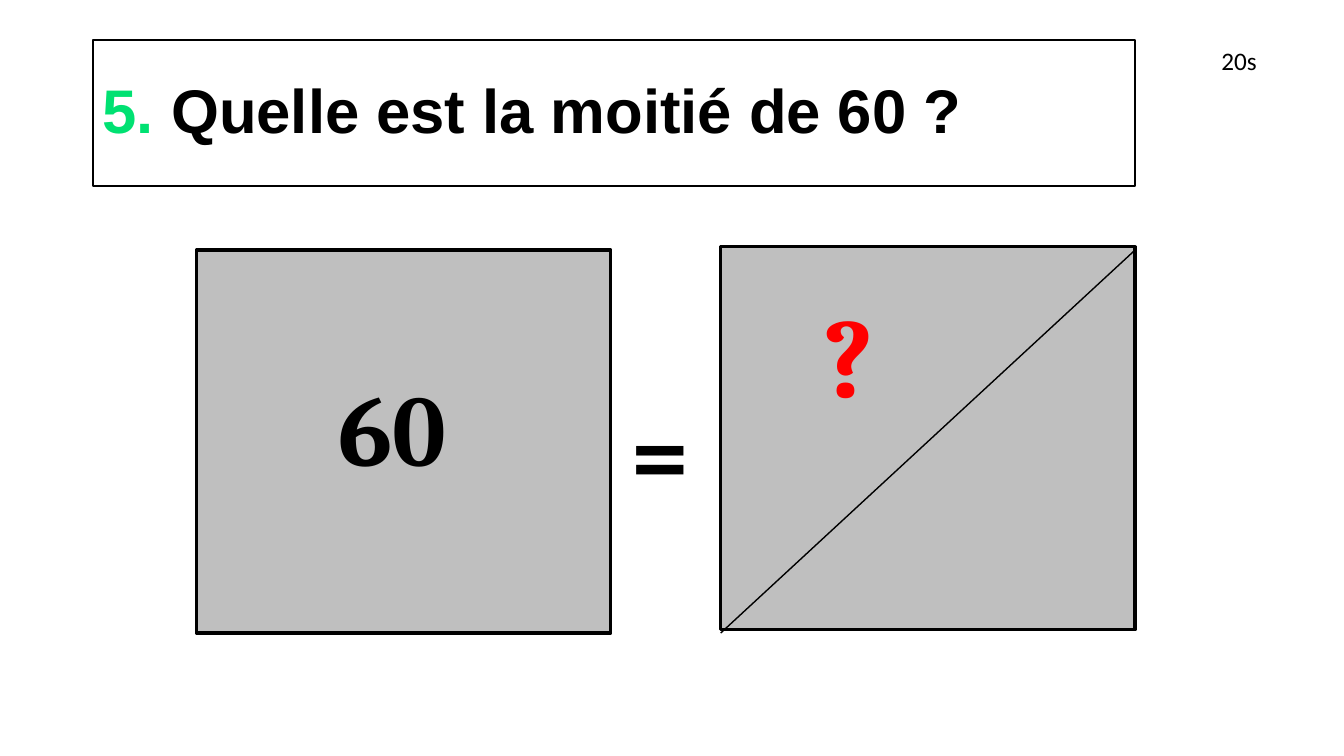
from pptx import Presentation
from pptx.dml.color import RGBColor
from pptx.enum.shapes import MSO_CONNECTOR, MSO_SHAPE
from pptx.enum.text import MSO_ANCHOR, MSO_AUTO_SIZE, PP_ALIGN
from pptx.oxml.ns import qn
from pptx.util import Pt
from lxml import etree

COLORS = {"ink": "000000", "number": "00E172", "square": "BFBFBF", "unknown": "FF0000"}
SQUARE_WIDTH, SQUARE_HEIGHT = 296, 273.6
WHOLE_LEFT, WHOLE_TOP = 140.4, 178.6
HALVES_LEFT, HALVES_TOP = 514.8, 176.4
SIGN_WIDTH = 106.6


class QuizSlide:
    def __init__(self, presentation):
        self.slide = presentation.slides.add_slide(presentation.slide_layouts[5])
        self.diagram = self.slide.shapes.add_group_shape().shapes

    def color(self, name):
        return RGBColor.from_string(COLORS[name])

    def outline(self, shape, width):
        shape.line.color.rgb = self.color("ink")
        shape.line.width = Pt(width)

    def add_runs(self, paragraph, runs, font, bold=True):
        """Add runs given as (text, size, color name)."""
        for text, size, color in runs:
            run = paragraph.add_run()
            run.text = text
            run.font.name = font
            run.font.size = Pt(size)
            run.font.bold = bold
            run.font.color.rgb = self.color(color)

    def title(self, left, top, width, height, runs):
        question = self.slide.shapes.title
        question.left, question.top = Pt(left), Pt(top)
        question.width, question.height = Pt(width), Pt(height)
        self.outline(question, 1.5)
        frame = question.text_frame
        frame.word_wrap = True
        frame.auto_size = MSO_AUTO_SIZE.NONE
        frame.vertical_anchor = MSO_ANCHOR.MIDDLE
        paragraph = frame.paragraphs[0]
        paragraph.alignment = PP_ALIGN.LEFT
        paragraph.line_spacing = 0.9
        self.add_runs(paragraph, runs, "Arial")

    def square(self, left, top):
        square = self.diagram.add_shape(
            MSO_SHAPE.RECTANGLE, Pt(left), Pt(top), Pt(SQUARE_WIDTH), Pt(SQUARE_HEIGHT))
        square.shadow.inherit = False
        square.fill.solid()
        square.fill.fore_color.rgb = self.color("square")
        self.outline(square, 2.25)

    def diagonal(self, left, bottom, right, top):
        diagonal = self.diagram.add_connector(
            MSO_CONNECTOR.STRAIGHT, Pt(left), Pt(bottom), Pt(right), Pt(top))
        self.outline(diagonal, 1)
        etree.SubElement(diagonal._element.spPr, qn("a:effectLst"))

    def text(self, shapes, left, top, width, height, runs, font,
             bold=True, wrap=True, align=PP_ALIGN.CENTER):
        box = shapes.add_textbox(Pt(left), Pt(top), Pt(width), Pt(height))
        frame = box.text_frame
        frame.word_wrap = wrap
        frame.auto_size = MSO_AUTO_SIZE.SHAPE_TO_FIT_TEXT
        frame.paragraphs[0].alignment = align
        self.add_runs(frame.paragraphs[0], runs, font, bold)

    def sign(self, left, top, height, *runs):
        self.text(self.diagram, left, top, SIGN_WIDTH, height, runs, "Cambria")


def main():
    presentation = Presentation()
    presentation.slide_width, presentation.slide_height = Pt(960), Pt(540)
    quiz = QuizSlide(presentation)
    quiz.title(66.2, 28.8, 744.5, 104.4, [
        ("5. ", 44, "number"), ("Quelle est la moitié de 60 ?", 44, "ink")])
    quiz.square(WHOLE_LEFT, WHOLE_TOP)
    quiz.square(HALVES_LEFT, HALVES_TOP)
    quiz.sign(226.8, 257.8, 94.3, ("60 ", 72, "ink"))
    quiz.diagonal(HALVES_LEFT, WHOLE_TOP + SQUARE_HEIGHT,
                  HALVES_LEFT + SQUARE_WIDTH, WHOLE_TOP)
    quiz.sign(560.9, 200.2, 115.2, ("?", 80, "unknown"), (" ", 72, "unknown"))
    quiz.sign(426.2, 274.3, 105.1, ("= ", 72, "ink"))
    quiz.text(quiz.slide.shapes, 865.4, 28.8, 40.3, 28.8, [("20s", 18, "ink")],
              "Calibri", bold=False, wrap=False, align=PP_ALIGN.LEFT)
    presentation.save("out.pptx")


if __name__ == "__main__":
    main()
